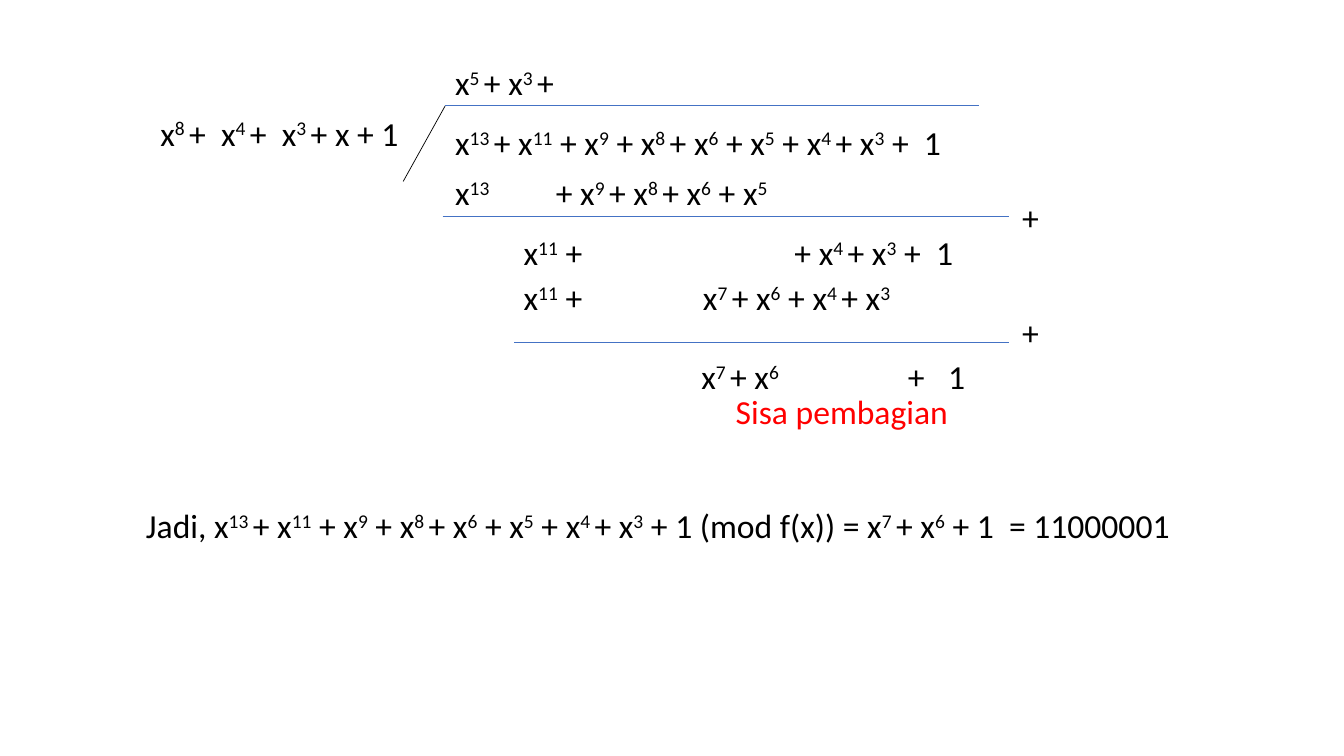
from lxml import etree
from pptx import Presentation
from pptx.dml.color import RGBColor
from pptx.enum.shapes import MSO_CONNECTOR
from pptx.enum.text import MSO_AUTO_SIZE
from pptx.oxml.ns import qn
from pptx.util import Inches, Pt

STRAIGHT = MSO_CONNECTOR.STRAIGHT
FIT_SHAPE = MSO_AUTO_SIZE.SHAPE_TO_FIT_TEXT
COLORS = {"text": "000000", "rule": "4472C4", "accent": "FF0000"}
DIVIDEND = "x^13 ^+ x^11^ + x^9^ + x^8 ^+ x^6^ + x^5^ + x^4 ^+ x^3^ + "
WORK_LEFT = 53
WORK_WIDTH = 80
CORNER = (WORK_LEFT, 12.6)


class DivisionSlide:
    font = "Calibri"
    size = Pt(24)
    line_width = Pt(0.5)
    columns, rows = 160, 90
    text_rows = 6

    def __init__(self):
        self.deck = Presentation()
        self.deck.slide_width = Inches(13.33)
        self.deck.slide_height = Inches(7.5)
        self.page = self.deck.slides.add_slide(self.deck.slide_layouts[6])

    def across(self, columns):
        return round(self.deck.slide_width * columns / self.columns)

    def down(self, rows):
        return round(self.deck.slide_height * rows / self.rows)

    def formula(self, left, top, width, text, tabs=(), color="text", wrap=True):
        box = self.page.shapes.add_textbox(
            self.across(left), self.down(top),
            self.across(width), self.down(self.text_rows))
        frame = box.text_frame
        frame.word_wrap = wrap
        frame.auto_size = FIT_SHAPE
        para = frame.paragraphs[0]
        for index, part in enumerate(text.split("^")):
            span = para.add_run()
            span.text = part
            span.font.name = self.font
            span.font.size = self.size
            span.font.color.rgb = RGBColor.from_string(COLORS[color])
            if index % 2:
                span.font._element.set("baseline", "30000")
        if tabs:
            stops = etree.SubElement(para._p.get_or_add_pPr(), qn("a:tabLst"))
            for tab in tabs:
                etree.SubElement(stops, qn("a:tab"),
                                 pos=str(self.across(tab)), algn="l")

    def line(self, start, end, color="rule"):
        rule = self.page.shapes.add_connector(
            STRAIGHT, self.across(start[0]), self.down(start[1]),
            self.across(end[0]), self.down(end[1]))
        rule.line.color.rgb = RGBColor.from_string(COLORS[color])
        rule.line.width = self.line_width
        etree.SubElement(rule._element.spPr, qn("a:effectLst"))

    def sum_rule(self, left, top, plus_top):
        self.line((left, top), (120.1, top))
        self.formula(120.5, plus_top, 4.4, "+", wrap=False)

    def save(self):
        self.deck.save("out.pptx")


def main():
    slide = DivisionSlide()
    slide.line(CORNER, (48, 21.6), "text")
    slide.line(CORNER, (116.6, CORNER[1]))
    slide.formula(17.9, 12.8, 34.7, "x^8 ^+  x^4 ^+  x^3 ^+ x + 1")
    slide.formula(WORK_LEFT, 6.8, 15.7, "x^5 ^+ x^3 ^+", wrap=False)

    work_rows = [
        (13.9, DIVIDEND + " 1", ()),
        (19.9, "x^13^\t+ x^9 ^+ x^8 ^+ x^6^ + x^5", (12,)),
        (27, "\tx^11^ +\t+ x^4 ^+ x^3^ +  1", (8.15, 40.4)),
        (32.4, "\tx^11^ +\tx^7 ^+ x^6^ + x^4 ^+ x^3", (8.15, 29.5)),
    ]
    for top, text, tabs in work_rows:
        slide.formula(WORK_LEFT, top, WORK_WIDTH, text, tabs)
    slide.sum_rule(52.7, 25.8, 22.8)
    slide.sum_rule(61.2, 40.8, 36.5)

    slide.formula(72.4, 41.8, WORK_WIDTH, "\tx^7 ^+ x^6^\t+\t1",
                  (9.9, 34.5, 39.3))
    slide.formula(86.4, 46, 28, "Sisa pembagian", color="accent", wrap=False)
    slide.formula(16.2, 59.5, 135, "Jadi, " + DIVIDEND
                  + "1 (mod f(x)) = x^7 ^+ x^6^ + 1  = 11000001")
    slide.save()


if __name__ == "__main__":
    main()
